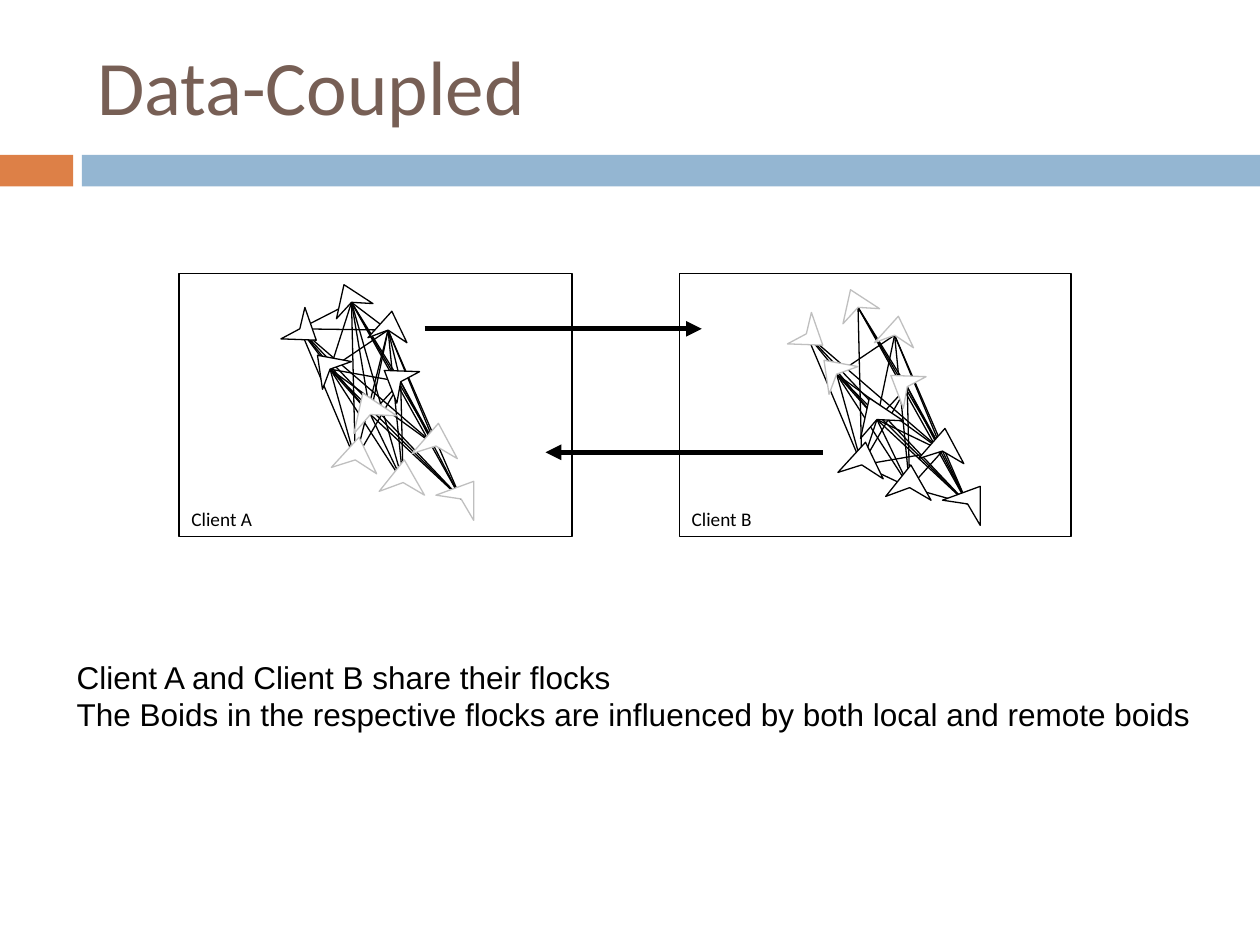
import pptx
import pptx.util
import pptx.dml.color
import pptx.enum.shapes
import pptx.enum.text
import pptx.oxml
import pptx.oxml.ns

RGB = pptx.dml.color.RGBColor
BLACK = RGB(0x00, 0x00, 0x00)
WHITE = RGB(0xFF, 0xFF, 0xFF)
GREY = RGB(0xBF, 0xBF, 0xBF)
BROWN = RGB(0x77, 0x5F, 0x55)
RUST = RGB(0xDD, 0x80, 0x47)
BLUE = RGB(0x94, 0xB6, 0xD2)

PX = 9144
ANCHOR = pptx.enum.text.MSO_ANCHOR
LEFT = pptx.enum.text.PP_ALIGN.LEFT

BOIDS = {
    "top": [(273, 226), (296, 241), (279, 240), (267, 253)],
    "right": [(311, 247), (323, 272), (308, 262), (292, 268)],
    "left": [(251, 270), (223, 269), (238, 261), (242, 244)],
    "base": [(321, 365), (337, 393), (320, 383), (301, 390)],
    "east": [(348, 336), (363, 364), (346, 354), (327, 360)],
    "west": [(285, 347), (299, 376), (282, 365), (263, 371)],
    "mid": [(305, 294), (333, 295), (318, 303), (315, 320)],
    "inner": [(252, 282), (279, 287), (262, 293), (256, 309)],
    "hub": [(288, 312), (315, 330), (294, 329), (281, 344)],
    "tail": [(376, 382), (376, 413), (366, 396), (346, 393)],
}
UPPER = {"top", "right", "left", "mid", "inner"}
LOWER = set(BOIDS) - UPPER

LINKS_A = {
    "top": "left right mid inner",
    "right": "left mid inner",
    "inner": "left mid",
    "hub": "top right left mid inner base tail",
    "west": "top right left mid inner",
    "base": "top right mid inner",
    "east": "top right left mid inner",
    "tail": "top right left mid inner",
}
LINKS_B = {
    "top": "mid",
    "right": "inner",
    "hub": "right left mid inner west east base tail",
    "west": "top left mid inner base east",
    "base": "right mid inner tail",
    "east": "top right left mid inner base tail",
    "tail": "top right left mid inner",
}


class Deck:
    def __init__(self, wide, high):
        self.prs = pptx.Presentation()
        self.prs.slide_width = wide * PX
        self.prs.slide_height = high * PX
        self.slide = self.prs.slides.add_slide(self.prs.slide_layouts[5])
        self.shapes = self.slide.shapes

    def place(self, shape, box):
        shape.left, shape.top, shape.width, shape.height = [n * PX for n in box]

    def label(self, shape, lines, font, size, color, anchor):
        frame = shape.text_frame
        frame.vertical_anchor = anchor
        for i, line in enumerate(lines):
            para = frame.add_paragraph() if i else frame.paragraphs[0]
            para.alignment = LEFT
            run = para.add_run()
            run.text = line
            run.font.name = font
            run.font.size = pptx.util.Pt(size)
            run.font.color.rgb = color

    def title(self, box, text):
        shape = self.shapes.title
        self.place(shape, box)
        shape.text_frame.word_wrap = True
        self.label(shape, [text], "Calibri", 44, BROWN, ANCHOR.MIDDLE)

    def note(self, box, lines):
        shape = self.shapes.add_textbox(*[n * PX for n in box])
        shape.text_frame.word_wrap = False
        self.label(shape, lines, "Arial", 18, BLACK, ANCHOR.TOP)

    def paint(self, shape, fill, line):
        shape.shadow.inherit = False
        shape.fill.solid()
        shape.fill.fore_color.rgb = fill
        if line is None:
            shape.line.fill.background()
        else:
            shape.line.color.rgb = line
            shape.line.width = pptx.util.Pt(0.75)

    def rect(self, box, fill, line=None):
        kind = pptx.enum.shapes.MSO_SHAPE.RECTANGLE
        shape = self.shapes.add_shape(kind, *[n * PX for n in box])
        self.paint(shape, fill, line)
        return shape

    def client(self, box, name):
        shape = self.rect(box, WHITE, BLACK)
        self.label(shape, [name], "Calibri", 11, BLACK, ANCHOR.BOTTOM)

    def line(self, start, end, width=0.75):
        kind = pptx.enum.shapes.MSO_CONNECTOR.STRAIGHT
        wire = self.shapes.add_connector(kind, *[n * PX for n in (*start, *end)])
        wire.line.color.rgb = BLACK
        wire.line.width = pptx.util.Pt(width)
        props = wire._element.spPr
        props.append(pptx.oxml.parse_xml(
            "<a:effectLst %s/>" % pptx.oxml.ns.nsdecls("a")))
        return wire

    def arrow(self, start, end):
        wire = self.line(start, end, 3)
        edge = wire._element.spPr.find(pptx.oxml.ns.qn("a:ln"))
        edge.append(pptx.oxml.parse_xml(
            '<a:tailEnd %s type="triangle"/>' % pptx.oxml.ns.nsdecls("a")))

    def boid(self, points, line):
        pen = self.shapes.build_freeform(*points[0], scale=PX)
        pen.add_line_segments(points[1:], close=True)
        self.paint(pen.convert_to_shape(), WHITE, line)

    def flock(self, links, local, dx, dy):
        boids = {name: [(x + dx, y + dy) for x, y in points]
                 for name, points in BOIDS.items()}
        for name, others in links.items():
            for other in others.split():
                self.line(boids[other][2], boids[name][2])
        for name, points in boids.items():
            self.boid(points, BLACK if name in local else GREY)


def main():
    deck = Deck(1000, 750)
    deck.rect((0, 123, 58, 25), RUST)
    deck.rect((65, 123, 935, 25), BLUE)
    deck.title((67, 13, 892, 108), "Data-Coupled")
    deck.client((539, 217, 311, 209), "Client B")
    deck.client((142, 217, 312, 209), "Client A")
    deck.flock(LINKS_A, UPPER, 0, 0)
    deck.flock(LINKS_B, LOWER, 402, 4)
    deck.arrow((337, 261), (557, 261))
    deck.arrow((653, 359), (433, 359))
    deck.note((51, 517, 925, 71), [
        "Client A and Client B share their flocks",
        "The Boids in the respective flocks are influenced by both local and remote boids",
    ])
    deck.prs.save("out.pptx")


if __name__ == "__main__":
    main()
